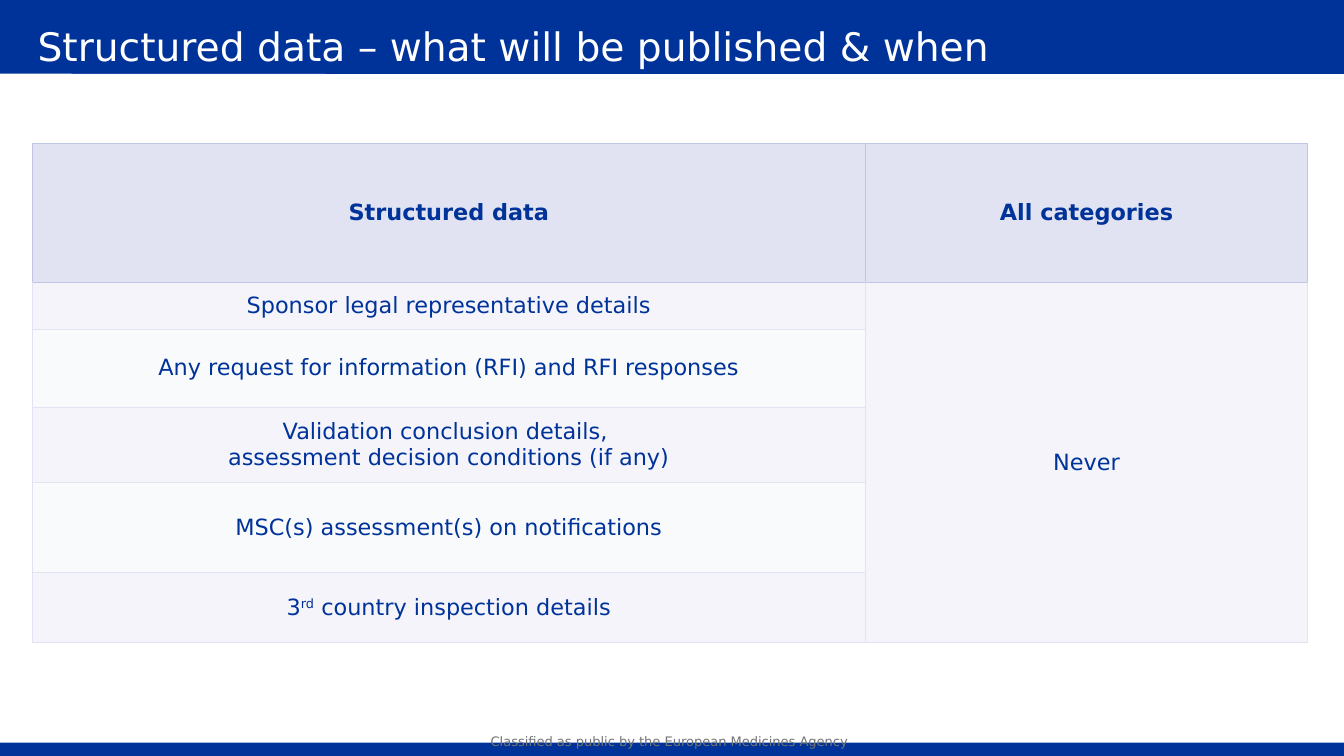
from lxml.etree import SubElement
from pptx import Presentation
from pptx.dml.color import RGBColor
from pptx.enum.shapes import MSO_CONNECTOR as Connector, MSO_SHAPE as Shape
from pptx.enum.text import MSO_ANCHOR as Anchor, PP_ALIGN as Align
from pptx.oxml.ns import qn
from pptx.util import Inches, Pt

WIDTH = 10
HEIGHT = WIDTH * 9 / 16
FONT = "DejaVu Sans"
BLUE = RGBColor(0x00, 0x33, 0x99)
WHITE = RGBColor(0xFF, 0xFF, 0xFF)
GREY = RGBColor(0x73, 0x73, 0x73)
HEADER_FILL = RGBColor(0xE1, 0xE3, 0xF2)
HEADER_BORDER = RGBColor(0xC0, 0xC5, 0xE4)
BODY_BORDER = HEADER_FILL
ROW_FILLS = RGBColor(0xF9, 0xFA, 0xFC), RGBColor(0xF4, 0xF4, 0xFA)

COLUMN_WIDTHS = 6.2, 3.29
ROW_HEIGHTS = 1.03, 0.35, 0.58, 0.56, 0.67, 0.52
HEADINGS = "Structured data", "All categories"
PUBLISHED = "Never"
DATA_ITEMS = [
    [["Sponsor legal representative details"]],
    [["Any request for information (RFI) and RFI responses"]],
    [["Validation conclusion details, "], ["assessment decision conditions (if any)"]],
    [["MSC(s) assessment(s) on notifications"]],
    [["3", ("rd", 30000), " country inspection details"]],
]


def write(frame, paragraphs, size, color, align, spacing=None, bold=False):
    """Fill a text frame with paragraphs of runs; a pair is text with its baseline shift."""
    for index, pieces in enumerate(paragraphs):
        paragraph = frame.add_paragraph() if index else frame.paragraphs[0]
        paragraph.alignment = align
        paragraph.line_spacing = spacing
        for piece in pieces:
            text, baseline = piece if isinstance(piece, tuple) else (piece, 0)
            run = paragraph.add_run()
            run.text = text
            run.font.name, run.font.size, run.font.bold = FONT, Pt(size), bold
            run.font.color.rgb = color
            if baseline:
                run.font._element.set("baseline", str(baseline))


def clear_margins(frame):
    """Remove the inner margins of a text frame and let it wrap."""
    frame.word_wrap = True
    frame.margin_left = frame.margin_right = frame.margin_top = frame.margin_bottom = 0


def add_band(slide, top, height):
    """Draw a full-width blue band."""
    band = slide.shapes.add_shape(Shape.RECTANGLE, 0, Inches(top), Inches(WIDTH), Inches(height))
    band.shadow.inherit = False
    band.fill.solid()
    band.fill.fore_color.rgb = BLUE
    band.line.fill.background()


def add_rule(slide, top):
    """Draw a thin white line across the slide."""
    rule = slide.shapes.add_connector(
        Connector.STRAIGHT, 0, Inches(top), Inches(WIDTH), Inches(top + 0.01))
    rule.line.color.rgb = WHITE
    rule.line.width = Pt(0.25)
    SubElement(rule.element.spPr, qn("a:effectLst"))


def add_classification(slide):
    """Add the small classification note at the foot."""
    note = slide.shapes.add_textbox(Inches(3.51), Inches(5.39), Inches(2.97), Inches(0.23))
    clear_margins(note.text_frame)
    note.text_frame.vertical_anchor = Anchor.MIDDLE
    write(note.text_frame, [["Classified as public by the European Medicines Agency "]],
          7, GREY, Align.CENTER, 1.2)


def place_title(slide):
    """Format the title and bring it in front of the top band."""
    title = slide.shapes.title
    title.left, title.top = Inches(0.28), Inches(0.14)
    title.width, title.height = Inches(9.21), Inches(0.78)
    clear_margins(title.text_frame)
    title.text_frame.vertical_anchor = Anchor.TOP
    write(title.text_frame, [["Structured data – what will be published & when"]],
          21, WHITE, Align.LEFT, Pt(27))
    title.element.getparent().append(title.element)


def style_cell(cell, fill, border, top_border):
    """Give a cell its borders, fill and middle anchor."""
    properties = cell._tc.get_or_add_tcPr()
    for side in "LRTB":
        line = SubElement(properties, qn(f"a:ln{side}"), w=str(Pt(0.75)))
        color = top_border if side == "T" else border
        SubElement(SubElement(line, qn("a:solidFill")), qn("a:srgbClr"), val=str(color))
    cell.fill.solid()
    cell.fill.fore_color.rgb = fill
    cell.vertical_anchor = Anchor.MIDDLE


def add_publication_table(slide):
    """Add the table of data items with one merged answer for all of them."""
    table = slide.shapes.add_table(
        len(ROW_HEIGHTS), len(COLUMN_WIDTHS), Inches(0.24), Inches(1.07),
        Inches(sum(COLUMN_WIDTHS)), Inches(sum(ROW_HEIGHTS))).table
    for column, width in zip(table.columns, COLUMN_WIDTHS):
        column.width = Inches(width)
    for row, height in zip(table.rows, ROW_HEIGHTS):
        row.height = Inches(height)

    for column, heading in enumerate(HEADINGS):
        cell = table.cell(0, column)
        style_cell(cell, HEADER_FILL, HEADER_BORDER, HEADER_BORDER)
        write(cell.text_frame, [[heading]], 12, BLUE, Align.CENTER, bold=True)

    table.cell(1, 1).merge(table.cell(len(DATA_ITEMS), 1))
    for row, item in enumerate(DATA_ITEMS, 1):
        top_border = HEADER_BORDER if row == 1 else BODY_BORDER
        style_cell(table.cell(row, 0), ROW_FILLS[row % 2], BODY_BORDER, top_border)
        style_cell(table.cell(row, 1), ROW_FILLS[1], BODY_BORDER, top_border)
        write(table.cell(row, 0).text_frame, item, 12, BLUE, Align.CENTER)
    write(table.cell(1, 1).text_frame, [[PUBLISHED]], 12, BLUE, Align.CENTER)


def main():
    """Build the slide and save it."""
    deck = Presentation()
    deck.slide_width, deck.slide_height = Inches(WIDTH), Inches(HEIGHT)
    slide = deck.slides.add_slide(deck.slide_layouts[5])
    add_band(slide, 0, 0.55)
    add_rule(slide, 0.55)
    add_band(slide, HEIGHT - 0.1, 0.1)
    add_classification(slide)
    add_publication_table(slide)
    place_title(slide)
    deck.save("out.pptx")


if __name__ == "__main__":
    main()
